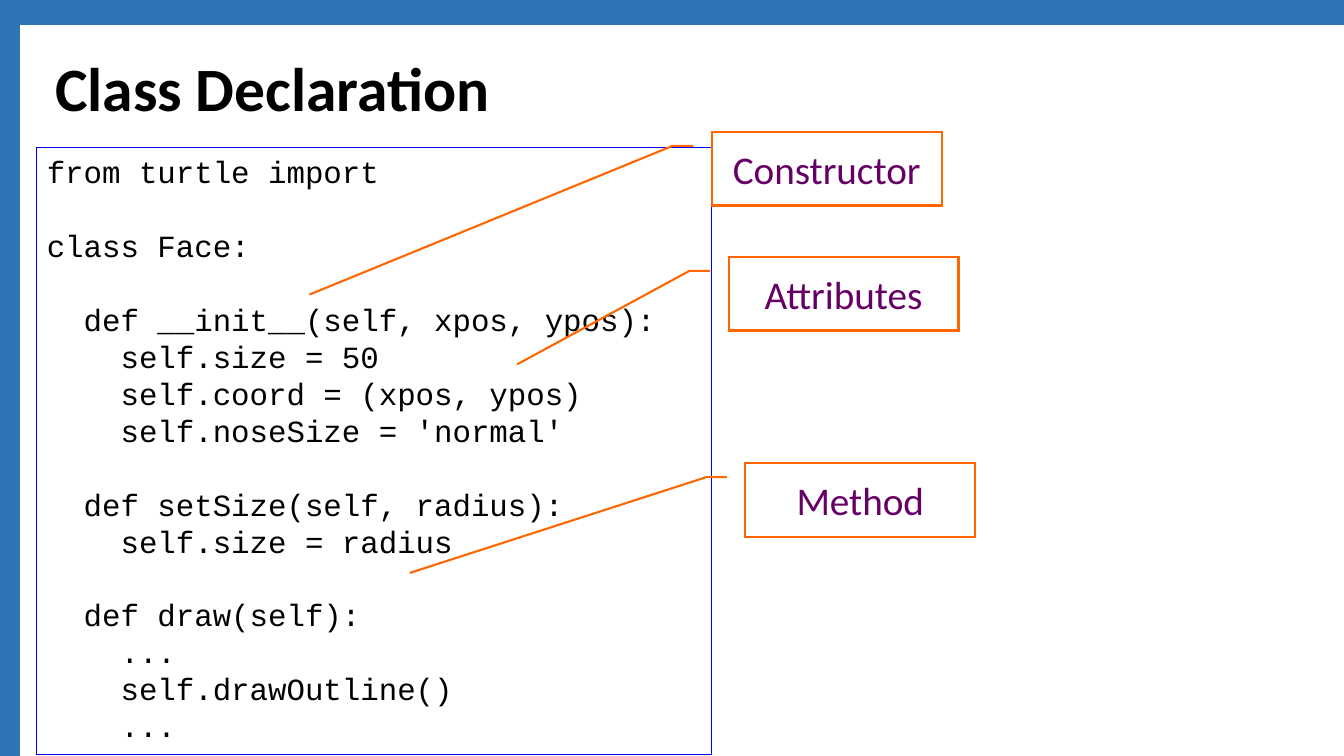
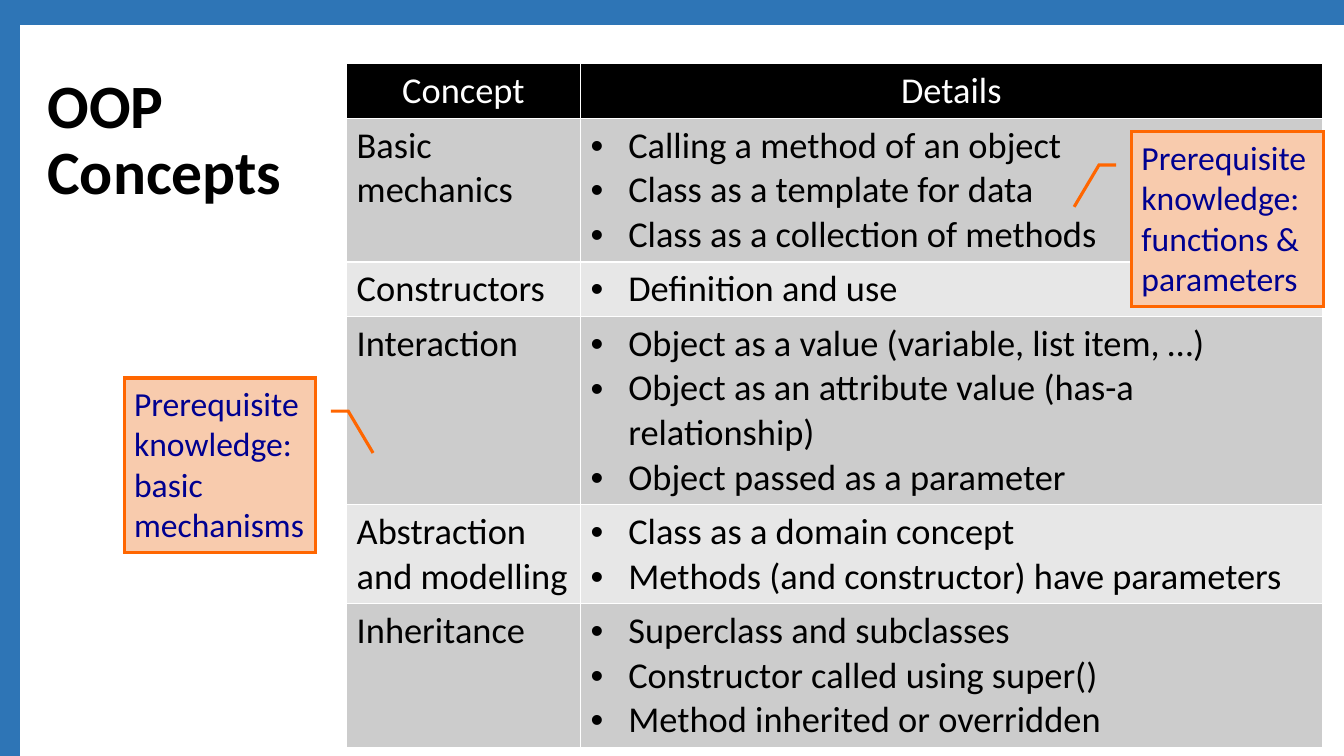
from lxml import etree
from pptx import Presentation
from pptx.dml.color import RGBColor
from pptx.enum.shapes import MSO_SHAPE as SHAPE
from pptx.enum.text import MSO_ANCHOR as ANCHOR, PP_ALIGN as ALIGN
from pptx.oxml.ns import qn
from pptx.util import Pt

WIDTH, HEIGHT = 960, 540
FRAME = (5.04, 9.2, 964, 543.6)
COLORS = {
    "band": "2E75B6", "text": "000000", "paper": "FFFFFF",
    "code_line": "0000FF", "accent": "FF6600", "label": "660066",
    "note_fill": "F8CBAD", "note_text": "000090",
    "header": "000000", "dark_row": "CCCCCC", "light_row": "E7E7E7",
}
BODY, MONO = "Calibri", "Courier New"

CODE_LINE = 26.4
CODE_BLOCKS = [
    ["from turtle import"],
    ["class Face:"],
    ["  def __init__(self, xpos, ypos):",
     "    self.size = 50",
     "    self.coord = (xpos, ypos)",
     "    self.noseSize = 'normal'"],
    ["  def setSize(self, radius):",
     "    self.size = radius"],
    ["  def draw(self):",
     "    ...",
     "    self.drawOutline()",
     "    ..."],
]

# Label, left, top, and pointer end as fractions of the box (y, x)
CODE_LABELS = [
    ("Constructor", 508.4, 94.2, (2.21, -1.75)),
    ("Attributes", 520.4, 183.5, (1.46, -0.92)),
    ("Method", 532.4, 330.9, (1.49, -1.46)),
]

# Concept, details, and number of text lines in the row
CONCEPTS = [
    ("Basic mechanics", ["Calling a method of an object",
                         "Class as a template for data",
                         "Class as a collection of methods"], 3),
    ("Constructors", ["Definition and use"], 1),
    ("Interaction", ["Object as a value (variable, list item, …)",
                     "Object as an attribute value (has-a relationship)",
                     "Object passed as a parameter"], 4),
    ("Abstraction and modelling", ["Class as a domain concept",
                                   "Methods (and constructor) have parameters"], 2),
    ("Inheritance", ["Superclass and subclasses",
                     "Constructor called using super()",
                     "Method inherited or overridden"], 3),
]
TABLE_LINE, CELL_MARGINS = 31.75, 7.35


def rgb(name):
    return RGBColor.from_string(COLORS[name])


def style_runs(tf, size, color, font=BODY, bold=False):
    for p in tf.paragraphs:
        for r in p.runs:
            r.font.size = Pt(size)
            r.font.name = font
            r.font.bold = bold
            r.font.color.rgb = rgb(color)


def add_box(s, shape, rect, fill, line, line_width):
    """Shape with a sharp-cornered outline; fill None leaves it open."""
    sp = s.shapes.add_shape(shape, *map(Pt, rect))
    sp.shadow.inherit = False
    if fill:
        sp.fill.solid()
        sp.fill.fore_color.rgb = rgb(fill)
    else:
        sp.fill.background()
    sp.line.color.rgb = rgb(line)
    sp.line.width = Pt(line_width)
    ln = sp._element.spPr.find(qn("a:ln"))
    etree.SubElement(ln, qn("a:miter")).set("lim", "800000")
    sp.text_frame.word_wrap = True
    return sp


def add_slide(prs):
    """Blank slide with the shared frame, seen as a top and a left band."""
    s = prs.slides.add_slide(prs.slide_layouts[6])
    add_box(s, SHAPE.RECTANGLE, FRAME, None, "band", 18)
    return s


def add_title(s, text, rect):
    tf = s.shapes.add_textbox(*map(Pt, rect)).text_frame
    tf.word_wrap = True
    tf.vertical_anchor = ANCHOR.MIDDLE
    tf.text = text
    tf.paragraphs[0].line_spacing = 0.9
    style_runs(tf, 44, "text", bold=True)


def add_code(s, rect):
    tf = add_box(s, SHAPE.RECTANGLE, rect, "paper", "code_line", 0.75).text_frame
    tf.vertical_anchor = ANCHOR.TOP
    tf.text = "\n".join(line for block in CODE_BLOCKS for line in block)
    for p in tf.paragraphs:
        p.alignment = ALIGN.LEFT
        p.line_spacing = Pt(CODE_LINE)
    # One line of space between code blocks
    start = 0
    for block in CODE_BLOCKS[:-1]:
        start += len(block)
        tf.paragraphs[start].space_before = Pt(CODE_LINE)
    style_runs(tf, 22, "text", MONO)


def add_callout(s, rect, fill, line_width, tip, on_right=False):
    """Bordered callout with a bent pointer leaving its left or right side."""
    sp = add_box(s, SHAPE.LINE_CALLOUT_2, rect, fill, "accent", line_width)
    points = [(0.19, -0.08), (0.19, -0.17), tip]
    for i, (y, x) in enumerate(points):
        sp.adjustments[2 * i] = y
        sp.adjustments[2 * i + 1] = 1 - x if on_right else x
    return sp.text_frame


def add_label(s, text, left, top, tip):
    tf = add_callout(s, (left, top, 164.2, 52.6), "paper", 1.5, tip)
    tf.margin_left = tf.margin_right = Pt(2.9)
    tf.vertical_anchor = ANCHOR.MIDDLE
    tf.text = text
    tf.paragraphs[0].alignment = ALIGN.CENTER
    style_runs(tf, 28, "label")


def add_note(s, text, left, top, on_right=False):
    tf = add_callout(s, (left, top, 136.8, 124.6), "note_fill", 2.25,
                     (0.43, -0.3), on_right)
    tf.vertical_anchor = ANCHOR.TOP
    tf.text = text
    tf.paragraphs[0].alignment = ALIGN.LEFT
    style_runs(tf, 24, "note_text")


def add_bullet(p, indent=27):
    pPr = p._p.get_or_add_pPr()
    pPr.set("marL", str(Pt(indent)))
    pPr.set("indent", str(-Pt(indent)))
    etree.SubElement(pPr, qn("a:buFont")).set("typeface", "Arial")
    etree.SubElement(pPr, qn("a:buChar")).set("char", "•")


def fill_cell(cell, text, fill, color="text"):
    tcPr = cell._tc.get_or_add_tcPr()
    for side in ("lnL", "lnR", "lnT", "lnB"):
        ln = etree.SubElement(tcPr, qn(f"a:{side}"), w=str(Pt(1)))
        solid = etree.SubElement(ln, qn("a:solidFill"))
        etree.SubElement(solid, qn("a:srgbClr")).set("val", COLORS["paper"])
    cell.fill.solid()
    cell.fill.fore_color.rgb = rgb(fill)
    cell.text_frame.text = text
    style_runs(cell.text_frame, 26, color)


def add_concept_table(s, left, top, widths):
    heights = [n * TABLE_LINE + CELL_MARGINS
               for n in [1] + [lines for _, _, lines in CONCEPTS]]
    frame = s.shapes.add_table(len(heights), len(widths), Pt(left), Pt(top),
                               Pt(sum(widths)), Pt(sum(heights)))
    table = frame.table
    table.horz_banding = False
    for column, width in zip(table.columns, widths):
        column.width = Pt(width)
    for row, height in zip(table.rows, heights):
        row.height = Pt(height)
    # Header
    for i, text in enumerate(("Concept", "Details")):
        cell = table.cell(0, i)
        fill_cell(cell, text, "header", "paper")
        cell.vertical_anchor = ANCHOR.MIDDLE
        cell.text_frame.paragraphs[0].alignment = ALIGN.CENTER
    # Body
    for i, (concept, details, _) in enumerate(CONCEPTS, start=1):
        fill = "dark_row" if i % 2 else "light_row"
        fill_cell(table.cell(i, 0), concept, fill)
        fill_cell(table.cell(i, 1), "\n".join(details), fill)
        for p in table.cell(i, 1).text_frame.paragraphs:
            add_bullet(p)


def main():
    prs = Presentation()
    prs.slide_width, prs.slide_height = Pt(WIDTH), Pt(HEIGHT)

    # Class declaration
    s = add_slide(prs)
    add_code(s, (26.4, 105.6, 481.9, 433.6))
    add_title(s, "Class Declaration", (32.2, 28.5, 862, 73.4))
    for label in CODE_LABELS:
        add_label(s, *label)

    # Concepts
    s = add_slide(prs)
    add_title(s, "OOP\vConcepts", (26.8, 23, 221, 156))
    add_concept_table(s, 247.6, 45.4, (167, 530))
    add_note(s, "Prerequisite knowledge: functions & parameters", 808.3, 94.2)
    add_note(s, "Prerequisite knowledge: basic mechanisms", 88.7, 270, on_right=True)

    prs.save("out.pptx")


if __name__ == "__main__":
    main()
